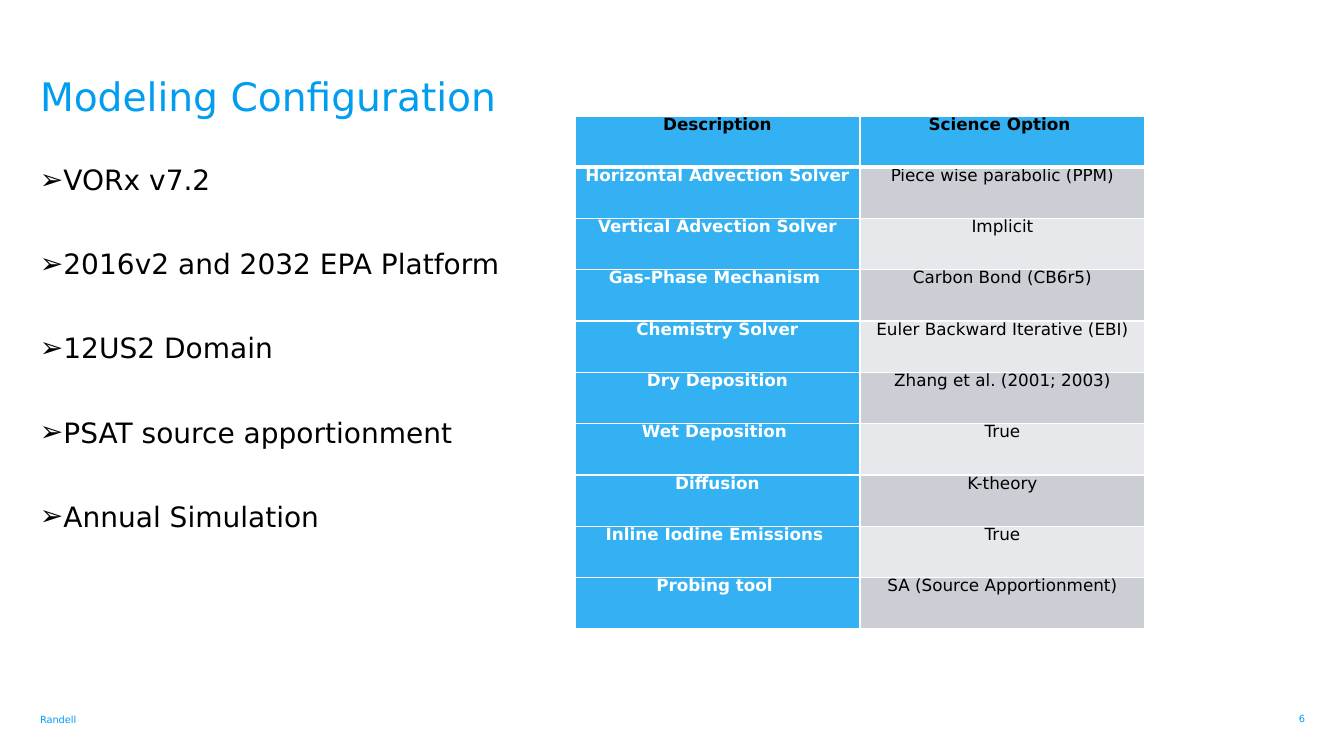
from dataclasses import dataclass

from lxml.etree import SubElement
from pptx import Presentation
from pptx.dml.color import RGBColor
from pptx.enum.text import MSO_ANCHOR as Anchor, PP_ALIGN as Align
from pptx.oxml.ns import qn
from pptx.util import Emu, Pt

# Content
TITLE = "Modeling Configuration"
TOPICS = [
    "VORx v7.2",
    "2016v2 and 2032 EPA Platform",
    "12US2 Domain",
    "PSAT source apportionment",
    "Annual Simulation",
]
OPTIONS = [
    ("Description", "Science Option "),
    ("Horizontal Advection Solver", "Piece wise parabolic (PPM)"),
    ("Vertical Advection Solver", "Implicit"),
    ("Gas-Phase Mechanism ", "Carbon Bond (CB6r5)"),
    ("Chemistry Solver", "Euler Backward Iterative (EBI)"),
    ("Dry Deposition", "Zhang et al. (2001; 2003)"),
    ("Wet Deposition ", "True"),
    ("Diffusion", "K-theory"),
    ("Inline Iodine Emissions ", "True"),
    ("Probing tool ", "SA (Source Apportionment)"),
]
COMPANY = "Randell"
PAGE = "6"

# Places in px: left, top, width, height
SLIDE_SIZE = (1344, 756)
TITLE_BOX = (40, 72, 1155, 103)
TOPICS_BOX = (40, 163, 1265, 512)
OPTIONS_BOX = (575, 116, 570, 513)
COMPANY_BOX = (40, 701, 86, 24)
PAGE_BOX = (1236, 713, 69, 12)
BULLET_INDENT = 17
CELL_MARGIN = 7


@dataclass(frozen=True)
class Theme:
    font: str = "DejaVu Sans"
    accent: str = "009DF0"
    label_fill: str = "33B1F3"
    bands: tuple = ("CCCED5", "E7E8EB")
    black: str = "000000"
    white: str = "FFFFFF"
    title: int = 28
    body: int = 20
    cell: int = 12
    cell_line: int = 13
    footer: int = 7
    topic_gap: int = 36
    rule: int = 1
    header_rule: int = 3


THEME = Theme()


def px(length):
    return Emu(round(length * 914400 / 100.8))


def style(paragraph, size, color, bold=False, align=Align.LEFT):
    paragraph.alignment = align
    for run in paragraph.runs:
        run.font.name = THEME.font
        run.font.size = Pt(size)
        run.font.bold = bold
        run.font.color.rgb = RGBColor.from_string(color)


def prepare(frame, anchor):
    frame.word_wrap = True
    frame.vertical_anchor = anchor
    frame.margin_left = frame.margin_right = 0
    frame.margin_top = frame.margin_bottom = 0
    return frame


def add_text(box, anchor=Anchor.TOP):
    return prepare(slide.shapes.add_textbox(*map(px, box)).text_frame, anchor)


def add_bullet(paragraph):
    props = paragraph._p.get_or_add_pPr()
    props.set("marL", str(px(BULLET_INDENT)))
    props.set("indent", str(-px(BULLET_INDENT)))
    SubElement(props, qn("a:buFont")).set("typeface", THEME.font)
    SubElement(props, qn("a:buChar")).set("char", "➢")


def add_borders(cell, bottom):
    props = cell._tc.get_or_add_tcPr()
    widths = {"L": THEME.rule, "R": THEME.rule, "T": THEME.rule, "B": bottom}
    for side, width in widths.items():
        line = SubElement(props, qn(f"a:ln{side}"), w=str(Pt(width)))
        fill = SubElement(line, qn("a:solidFill"))
        SubElement(fill, qn("a:srgbClr"), val=THEME.white)


prs = Presentation()
prs.slide_width, prs.slide_height = map(px, SLIDE_SIZE)
slide = prs.slides.add_slide(prs.slide_layouts[5])

# Title
title = slide.shapes.title
title.left, title.top, title.width, title.height = map(px, TITLE_BOX)
prepare(title.text_frame, Anchor.TOP).text = TITLE
style(title.text_frame.paragraphs[0], THEME.title, THEME.accent)

# Topics
topics = add_text(TOPICS_BOX)
topics.text = "\n".join(TOPICS)
for topic in topics.paragraphs:
    topic.space_after = Pt(THEME.topic_gap)
    add_bullet(topic)
    style(topic, THEME.body, THEME.black)

# Science options table
options = slide.shapes.add_table(len(OPTIONS), 2, *map(px, OPTIONS_BOX)).table
for column in options.columns:
    column.width = px(OPTIONS_BOX[2] / 2)
for row in options.rows:
    row.height = px(OPTIONS_BOX[3] / len(OPTIONS))

for r, entry in enumerate(OPTIONS):
    header = r == 0
    for c, text in enumerate(entry):
        label = c == 0
        cell = options.cell(r, c)
        cell.margin_left = cell.margin_right = px(CELL_MARGIN)
        cell.margin_top = cell.margin_bottom = 0
        add_borders(cell, THEME.header_rule if header else THEME.rule)
        cell.fill.solid()
        fill = THEME.label_fill if header or label else THEME.bands[(r - 1) % 2]
        cell.fill.fore_color.rgb = RGBColor.from_string(fill)
        cell.text_frame.text = text
        paragraph = cell.text_frame.paragraphs[0]
        paragraph.line_spacing = Pt(THEME.cell_line)
        color = THEME.white if label and not header else THEME.black
        style(paragraph, THEME.cell, color, header or label, Align.CENTER)

# Footer
for text, box, align in (
    (COMPANY, COMPANY_BOX, Align.LEFT),
    (PAGE, PAGE_BOX, Align.RIGHT),
):
    footer = add_text(box, Anchor.BOTTOM)
    footer.text = text
    style(footer.paragraphs[0], THEME.footer, THEME.accent, align=align)

prs.save("out.pptx")
